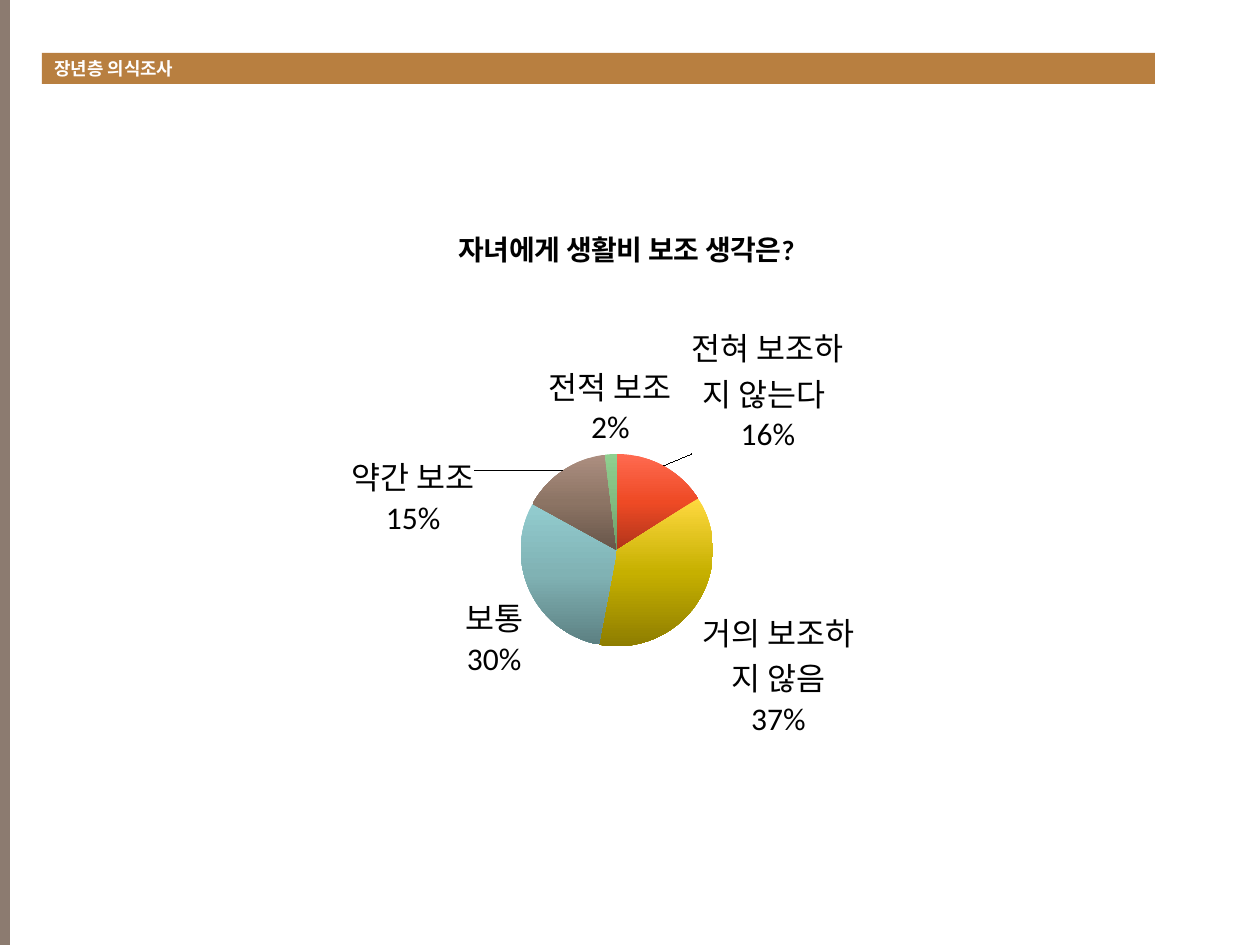
from lxml import etree
from pptx import Presentation, util as u
from pptx.chart.data import CategoryChartData
from pptx.dml.color import RGBColor
from pptx.enum import chart as ch, shapes, text
from pptx.oxml import parse_xml
from pptx.oxml.ns import nsdecls, qn

PX = 914400 // 126
COLORS = {"side": "8C7B70", "banner": "B87F40", "white": "FFFFFF", "black": "000000"}
# answer, share, slice gradient from top to bottom
ANSWERS = [
    ("전혀 보조하지 않는다 ", 16, ("FF6A50", "EE4A25", "B0341A")),
    ("거의 보조하지 않음", 37, ("FFD940", "C6B000", "8E7D00")),
    ("보통", 30, ("92CCCF", "80B2B4", "5C8082")),
    ("약간 보조", 15, ("AC8E80", "8C7464", "675549")),
    ("전적 보조", 2, ("8FD08F", "82BA80", "6A9A68")),
]
LABEL_SHIFTS = {0: (0.03, -0.01), 3: (-0.1, 0.13)}
QUESTION = "자녀에게 생활비 보조 생각은? "


def layout_xml(x, y, w=None, h=None, inner=False, edge=True):
    """Manual chart layout, in fractions of the chart."""
    tags = [("layoutTarget", "inner")] if inner else []
    tags += [("xMode", "edge"), ("yMode", "edge")] if edge else []
    tags += [("x", x), ("y", y)]
    tags += [("w", w), ("h", h)] if w else []
    body = "".join(f'<c:{tag} val="{value}"/>' for tag, value in tags)
    return f'<c:layout {nsdecls("c")}><c:manualLayout>{body}</c:manualLayout></c:layout>'


def label_xml(index, shift):
    shown = {"LegendKey": 0, "Val": 0, "CatName": 1, "SerName": 0, "Percent": 1, "BubbleSize": 0}
    flags = "".join(f'<c:show{name} val="{value}"/>' for name, value in shown.items())
    return (f'<c:dLbl {nsdecls("c")}><c:idx val="{index}"/>{layout_xml(*shift, edge=False)}'
            f'<c:dLblPos val="outEnd"/>{flags}<c:separator>\n</c:separator></c:dLbl>')


class Deck:
    font = "Calibri"

    def __init__(self, width, height):
        self.prs = Presentation()
        self.prs.slide_width, self.prs.slide_height = width * PX, height * PX
        self.slide = self.prs.slides.add_slide(self.prs.slide_layouts[6])

    def style(self, font, size, color, bold=False):
        font.name, font.size, font.bold = self.font, u.Pt(size), bold
        font.color.rgb = RGBColor.from_string(COLORS[color])

    def bar(self, box, color, words=None):
        bar = self.slide.shapes.add_shape(shapes.MSO_SHAPE.RECTANGLE, *(v * PX for v in box))
        bar.shadow.inherit = False
        bar.fill.solid()
        bar.fill.fore_color.rgb = RGBColor.from_string(COLORS[color])
        bar.line.fill.background()
        if words:
            frame = bar.text_frame
            frame.word_wrap = True
            frame.vertical_anchor = text.MSO_ANCHOR.MIDDLE
            frame.margin_top = frame.margin_bottom = 0
            line = frame.paragraphs[0]
            line.alignment = text.PP_ALIGN.LEFT
            line.space_before = u.Pt(2)
            run = line.add_run()
            run.text = words
            self.style(run.font, 10.2, "white", bold=True)

    def pie(self, box, question, answers):
        data = CategoryChartData()
        data.categories = [name for name, _, _ in answers]
        data.add_series(question, [share for _, share, _ in answers])
        chart = self.slide.shapes.add_chart(
            ch.XL_CHART_TYPE.PIE, *(v * PX for v in box), data).chart
        self.style(chart.font, 18, "black")
        chart.has_legend = False
        self.chart_title(chart, question)

        plot = chart.plots[0]
        plot.vary_by_categories = True
        area = chart.element.find(".//" + qn("c:plotArea"))
        for old in area.findall(qn("c:layout")):
            area.remove(old)
        area.insert(0, parse_xml(layout_xml(0.37, 0.467, 0.229, 0.344, inner=True)))

        series = plot.series[0]
        for index, (_, _, gradient) in enumerate(answers):
            self.gradient(series.points[index].format, gradient)
        self.labels(series)

    def chart_title(self, chart, question):
        chart.has_title = True
        run = chart.chart_title.text_frame.paragraphs[0].add_run()
        run.text = question
        self.style(run.font, 16, "black", bold=True)
        title = chart.element.find(".//" + qn("c:title"))
        for old in title.findall(qn("c:layout")):
            title.remove(old)
        title.find(qn("c:tx")).addnext(parse_xml(layout_xml(0.29, 0.05)))

    def gradient(self, part, colors):
        """Fill from top to bottom with evenly spaced colours."""
        part.line.fill.background()
        part.fill.gradient()
        part.fill.gradient_angle = 270
        stops = part.fill.gradient_stops
        stop_list = part.fill._xPr.find(".//" + qn("a:gsLst"))
        for stop in list(stop_list):
            stop_list.remove(stop)
        for step, color in enumerate(colors):
            stop = etree.SubElement(stop_list, qn("a:gs"), pos=str(step * 50000))
            etree.SubElement(stop, qn("a:srgbClr"), val=color)

    def labels(self, series):
        labels = series.data_labels
        labels.show_value = False
        labels.show_category_name = labels.show_percentage = True
        labels.position = ch.XL_LABEL_POSITION.OUTSIDE_END
        self.style(labels.font, 18, "black")
        holder = series._element.find(qn("c:dLbls"))
        separator = parse_xml(f'<c:separator {nsdecls("c")}>\n</c:separator>')
        holder.find(qn("c:showBubbleSize")).addnext(separator)
        for place, (index, shift) in enumerate(LABEL_SHIFTS.items()):
            holder.insert(place, parse_xml(label_xml(index, shift)))


def main():
    deck = Deck(1260, 945)
    deck.bar((0, 0, 10, 945), "side")
    deck.bar((42, 53, 1113, 31), "banner", "장년층 의식조사")
    deck.pie((210, 193, 840, 559), QUESTION, ANSWERS)
    deck.prs.save("out.pptx")


if __name__ == "__main__":
    main()
